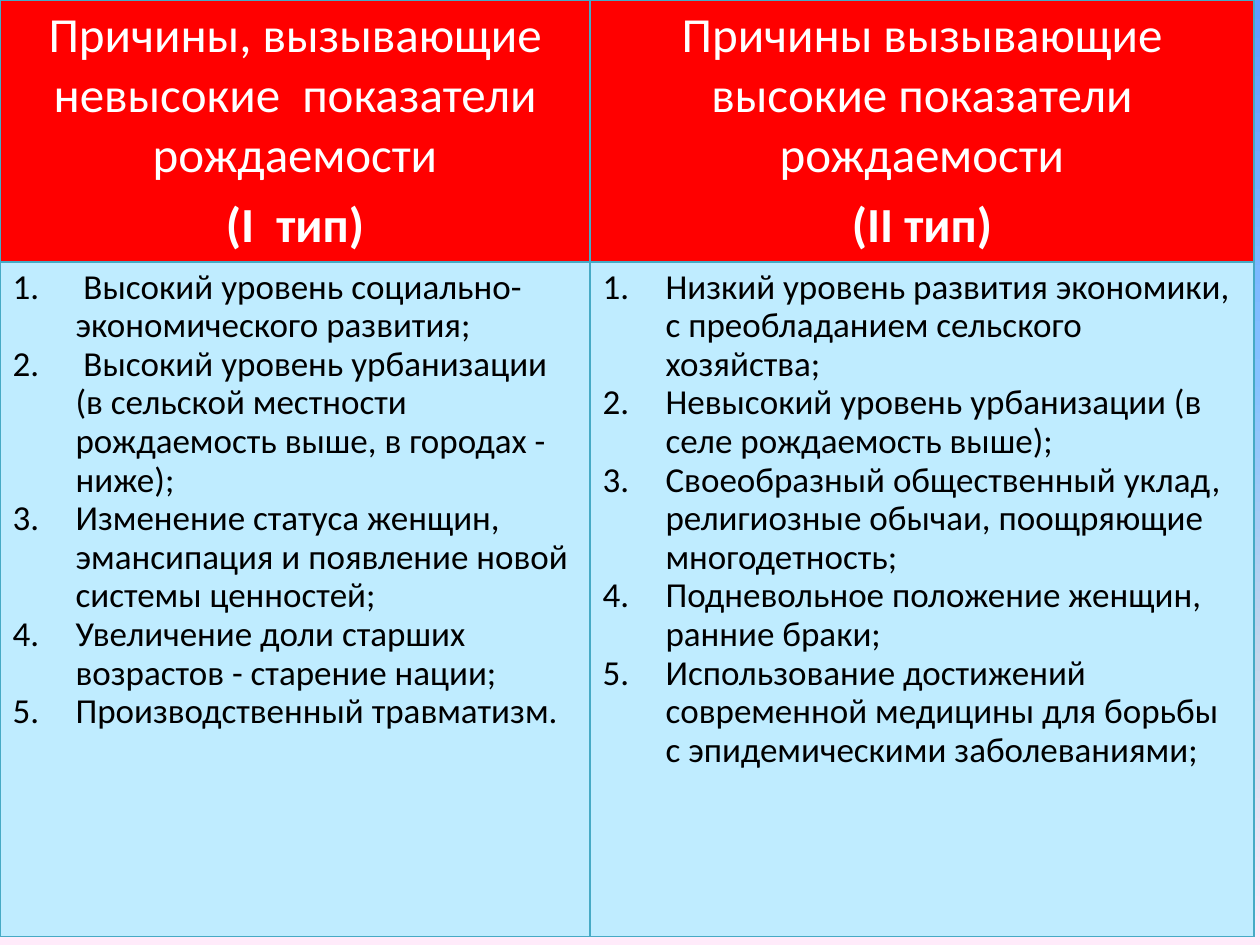
from lxml.etree import SubElement
from pptx import Presentation
from pptx.dml.color import RGBColor
from pptx.enum.text import PP_ALIGN
from pptx.oxml.ns import qn
from pptx.util import Emu, Pt

EMU_PER_PX = 914400 // 126
COLUMN_WIDTHS = (590, 664)
ROW_HEIGHTS = (262, 675)
BACKGROUND_STOPS = ((0, "5E9EFF"), (40, "85C2FF"), (70, "C4D6EB"), (100, "FFEBFA"))

HEADINGS = (
    ("Причины, вызывающие невысокие  показатели рождаемости", "(I  тип)"),
    ("Причины вызывающие высокие показатели рождаемости", "(II тип)"),
)
REASONS = (
    (
        " Высокий уровень социально-экономического развития;",
        " Высокий уровень урбанизации (в сельской местности рождаемость выше, в городах - ниже);",
        "Изменение статуса женщин, эмансипация и появление новой системы ценностей;",
        "Увеличение доли старших возрастов - старение нации;",
        "Производственный травматизм.",
    ),
    (
        "Низкий уровень развития экономики, с преобладанием сельского хозяйства;",
        "Невысокий уровень урбанизации (в селе рождаемость выше);",
        "Своеобразный общественный уклад, религиозные обычаи, поощряющие многодетность;",
        "Подневольное положение женщин, ранние браки;",
        "Использование достижений современной медицины для борьбы с эпидемическими заболеваниями;",
    ),
)


def px(length):
    """Convert whole pixels to EMU."""
    return Emu(length * EMU_PER_PX)


def color(hex_value):
    """Convert a hex string to a colour."""
    return RGBColor.from_string(hex_value)


def add_solid_fill(parent, hex_value):
    """Append a solid fill element."""
    SubElement(SubElement(parent, qn("a:solidFill")), qn("a:srgbClr"), val=hex_value)


def paint_background(slide, stops):
    """Fill the slide from top to bottom with a gradient of several stops."""
    fill = slide.background.fill
    fill.gradient()
    fill.gradient_angle = 270
    stop_list = slide.element.find(".//" + qn("a:gsLst"))
    for old_stop in list(stop_list):
        stop_list.remove(old_stop)
    for percent, hex_value in stops:
        stop = SubElement(stop_list, qn("a:gs"), pos=str(percent * 1000))
        SubElement(stop, qn("a:srgbClr"), val=hex_value)


def style_cell(cell, fill, border="46AAC5"):
    """Give a cell its four borders and its fill."""
    properties = cell._tc.get_or_add_tcPr()
    for side in ("lnL", "lnR", "lnT", "lnB"):
        line = SubElement(properties, qn(f"a:{side}"), w=str(Pt(0.75)))
        add_solid_fill(line, border)
    cell.fill.solid()
    cell.fill.fore_color.rgb = color(fill)


def write_paragraph(paragraph, text, *, size, ink, bold=False, align=PP_ALIGN.LEFT,
                    before=0, spacing=1.0, numbered=False):
    """Write one formatted paragraph, numbered if asked."""
    paragraph.alignment = align
    paragraph.space_before = Pt(before)
    paragraph.line_spacing = spacing
    run = paragraph.add_run()
    run.text = text
    run.font.name = "Calibri"
    run.font.size = Pt(size)
    run.font.bold = bold
    run.font.color.rgb = color(ink)
    if numbered:
        properties = paragraph._p.get_or_add_pPr()
        properties.set("marL", str(px(63)))
        properties.set("indent", str(-px(63)))
        SubElement(properties, qn("a:buFont"), typeface="+mj-lt")
        SubElement(properties, qn("a:buAutoNum"), type="arabicPeriod")


def next_paragraph(frame, index):
    """Return the first paragraph of a frame or add another."""
    return frame.add_paragraph() if index else frame.paragraphs[0]


def fill_heading(cell, lines):
    """Write a column heading with its type in bold."""
    style_cell(cell, "FF0000")
    for index, line in enumerate(lines):
        write_paragraph(next_paragraph(cell.text_frame, index), line, size=28, ink="FFFFFF",
                        bold=index > 0, align=PP_ALIGN.CENTER, before=5.6)


def fill_reasons(cell, reasons):
    """Write the numbered reasons of a column."""
    style_cell(cell, "BFECFF")
    for index, reason in enumerate(reasons):
        write_paragraph(next_paragraph(cell.text_frame, index), reason, size=20, ink="000000",
                        spacing=0.9, numbered=True)


def add_comparison(slide):
    """Add the table comparing the two types."""
    table = slide.shapes.add_table(2, 2, 0, 0, px(sum(COLUMN_WIDTHS)), px(sum(ROW_HEIGHTS))).table
    table.horz_banding = False
    for row, height in zip(table.rows, ROW_HEIGHTS):
        row.height = px(height)
    for index, width in enumerate(COLUMN_WIDTHS):
        table.columns[index].width = px(width)
        fill_heading(table.cell(0, index), HEADINGS[index])
        fill_reasons(table.cell(1, index), REASONS[index])


def main():
    """Build and save the slide."""
    presentation = Presentation()
    presentation.slide_width, presentation.slide_height = px(1260), px(945)
    slide = presentation.slides.add_slide(presentation.slide_layouts[6])
    paint_background(slide, BACKGROUND_STOPS)
    add_comparison(slide)
    presentation.save("out.pptx")


if __name__ == "__main__":
    main()
